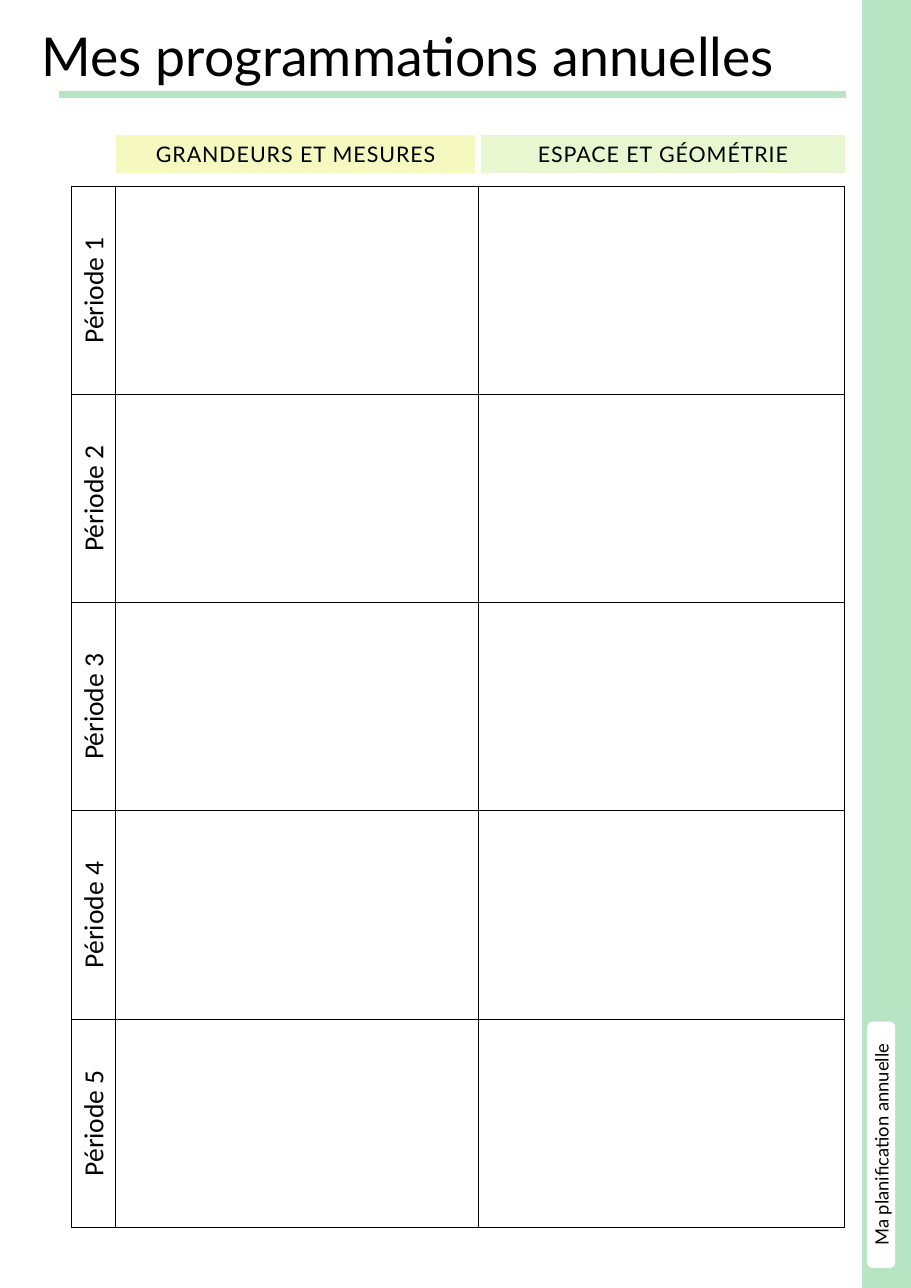
from lxml import etree
from pptx import Presentation
from pptx import util as u
from pptx.dml.color import RGBColor
from pptx.enum import shapes, text
from pptx.oxml.ns import qn

TITLE = "Mes programmations annuelles"
TAB_LABEL = "Ma planification annuelle"
SUBJECTS = [
    ("GRANDEURS ET MESURES", "F5F9C0", 1.06, 3.25),
    ("ESPACE ET GÉOMÉTRIE", "E9F7D1", 4.37, 3.3),
]
PERIODS = [f"Période {number}" for number in range(1, 6)]
COLUMN_WIDTHS = [0.4, 3.29, 3.33]
ROW_HEIGHT = 1.89
TABLE_LEFT, TABLE_TOP = 0.65, 1.69
GREEN, WHITE, BLACK = "B7E5C3", "FFFFFF", "000000"


def paint(color_format, value):
    color_format.rgb = RGBColor.from_string(value)


def write(frame, content, size, font="Lato", align=text.PP_ALIGN.CENTER, spacing=None):
    paragraph = frame.paragraphs[0]
    paragraph.alignment = align
    run = paragraph.add_run()
    run.text = content
    run.font.size = u.Pt(size)
    run.font.name = font
    paint(run.font.color, BLACK)
    if spacing:
        run.font._element.set("spc", str(round(spacing * 100)))


def add_block(slide, kind, box, color, line_width):
    shape = slide.shapes.add_shape(kind, *map(u.Inches, box))
    shape.shadow.inherit = False
    shape.fill.solid()
    paint(shape.fill.fore_color, color)
    paint(shape.line.color, color)
    shape.line.width = u.Pt(line_width)
    frame = shape.text_frame
    frame.vertical_anchor = text.MSO_ANCHOR.MIDDLE
    frame.margin_top = frame.margin_bottom = 0
    return shape


def add_border(cell):
    properties = cell._tc.get_or_add_tcPr()
    for position, side in enumerate(("lnL", "lnR", "lnT", "lnB")):
        line = etree.Element(qn(f"a:{side}"), w=str(u.Pt(0.75)))
        fill = etree.SubElement(line, qn("a:solidFill"))
        etree.SubElement(fill, qn("a:srgbClr"), val=BLACK)
        properties.insert(position, line)


def add_title(slide):
    box = slide.shapes.add_textbox(*map(u.Inches, (0.28, 0.16, 7.67, 0.69)))
    box.text_frame.word_wrap = True
    write(box.text_frame, TITLE, 35, align=text.PP_ALIGN.LEFT)
    rule = slide.shapes.add_connector(
        shapes.MSO_CONNECTOR.STRAIGHT, *map(u.Inches, (0.54, 0.86, 7.68, 0.86)))
    paint(rule.line.color, GREEN)
    rule.line.width = u.Pt(4.75)
    etree.SubElement(rule._element.spPr, qn("a:effectLst"))


def add_side_band(slide):
    add_block(slide, shapes.MSO_SHAPE.RECTANGLE, (7.83, 0, 0.43, 11.69), GREEN, 1)
    label = add_block(
        slide, shapes.MSO_SHAPE.ROUNDED_RECTANGLE, (7.88, 9.28, 0.24, 2.22), WHITE, 1)
    label.text_frame._txBody.bodyPr.set("vert", "vert270")
    write(label.text_frame, TAB_LABEL, 12)


def add_planning_table(slide):
    box = (TABLE_LEFT, TABLE_TOP, sum(COLUMN_WIDTHS), ROW_HEIGHT * len(PERIODS))
    table = slide.shapes.add_table(
        len(PERIODS), len(COLUMN_WIDTHS), *map(u.Inches, box)).table
    table.first_row = table.horz_banding = False
    for column, width in zip(table.columns, COLUMN_WIDTHS):
        column.width = u.Inches(width)
    for row, period in zip(table.rows, PERIODS):
        row.height = u.Inches(ROW_HEIGHT)
        for cell in row.cells:
            cell.fill.background()
            add_border(cell)
        heading = row.cells[0]
        heading.vertical_anchor = text.MSO_ANCHOR.MIDDLE
        heading._tc.get_or_add_tcPr().set("vert", "vert270")
        write(heading.text_frame, period, 18, font="Calibri")


def main():
    presentation = Presentation()
    presentation.slide_width = u.Inches(8.27)
    presentation.slide_height = u.Inches(11.69)
    slide = presentation.slides.add_slide(presentation.slide_layouts[6])
    add_title(slide)
    add_side_band(slide)
    add_planning_table(slide)
    for subject, color, left, width in SUBJECTS:
        header = add_block(
            slide, shapes.MSO_SHAPE.RECTANGLE, (left, 1.23, width, 0.34), color, 0.75)
        write(header.text_frame, subject, 14, spacing=0.6)
    presentation.save("out.pptx")


if __name__ == "__main__":
    main()
